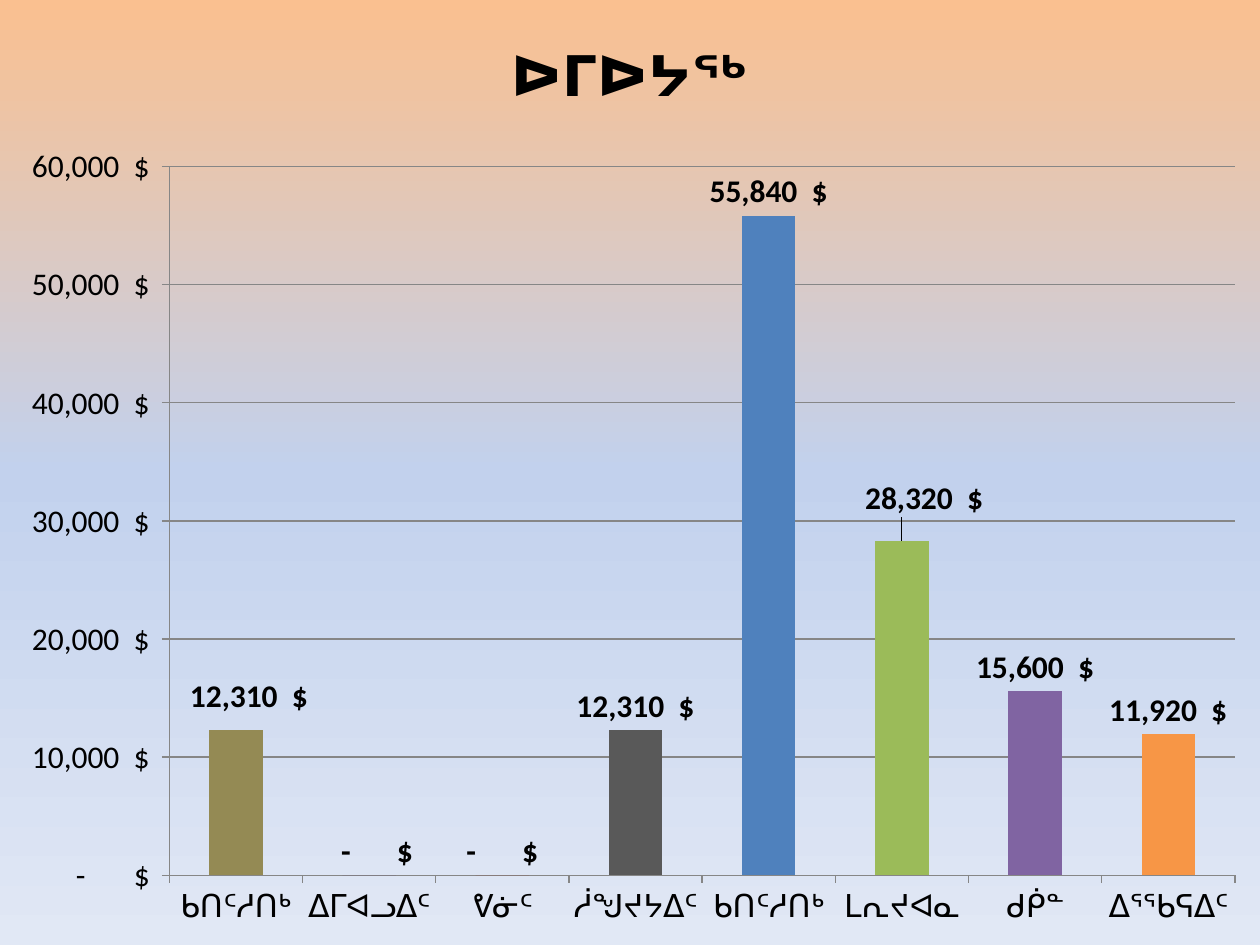
import pptx
import pptx.chart.data
import pptx.dml.color
import pptx.enum.chart
import pptx.oxml
import pptx.oxml.ns
import pptx.util
from dataclasses import dataclass

PX = 9525
WIDTH, HEIGHT = 960, 720
MONEY = '_ * #,##0_)\\ "$"_ ;_ * \\(#,##0\\)\\ "$"_ ;_ * "-"??_)\\ "$"_ ;_ @_ '


@dataclass(frozen=True)
class Theme:
    """Colours, font and type sizes of the slide."""
    font: str = "Calibri"
    text: str = "000000"
    rule: str = "868686"
    backdrop: tuple = ((0, "FAC090"), (50, "C2D1ED"), (100, "E1E8F5"))
    body_pt: int = 18
    title_pt: int = 32


THEME = Theme()
TITLE = "ᐅᒥᐅᔭᖅ"
COSTS = (
    ("ᑲᑎᑦᓱᑎᒃ", 12310, "948A54"),
    ("ᐃᒥᐊᓗᐃᑦ", 0, "604A7B"),
    ("ᕓᓃᑦ", 0, "953735"),
    ("ᓲᖑᔪᔭᐃᑦ", 12310, "595959"),
    ("ᑲᑎᑦᓱᑎᒃ", 55840, "4F81BD"),
    ("ᒪᕆᔪᐊᓇ", 28320, "9BBB59"),
    ("ᑯᑮᓐ", 15600, "8064A2"),
    ("ᐃᕐᖃᕋᐃᑦ", 11920, "F79646"),
)
LABEL_SHIFTS = {0: (10, -7), 1: (6, 0), 5: (17, -14)}


def rgb(code):
    """Return a colour object for a hex code."""
    return pptx.dml.color.RGBColor.from_string(code)


def style_font(font, size, bold=False):
    """Apply the theme font at the given size."""
    font.name = THEME.font
    font.size = pptx.util.Pt(size)
    font.bold = bold
    font.color.rgb = rgb(THEME.text)


def paint_backdrop(slide):
    """Fill the slide with a vertical three-stop gradient."""
    fill = slide.background.fill
    fill.gradient()
    gradient = slide.background._cSld.find(".//" + pptx.oxml.ns.qn("a:gradFill"))
    stops = "".join(
        f'<a:gs pos="{place * 1000}"><a:srgbClr val="{code}"/></a:gs>'
        for place, code in THEME.backdrop
    )
    space = pptx.oxml.ns.nsdecls("a")
    for child in list(gradient):
        gradient.remove(child)
    gradient.append(pptx.oxml.parse_xml(f"<a:gsLst {space}>{stops}</a:gsLst>"))
    gradient.append(pptx.oxml.parse_xml(f'<a:lin {space} ang="5400000" scaled="0"/>'))


def manual_layout(box, x, y, width=None, height=None):
    """Return a chart layout element for px measures within a box."""
    parts = []
    if width is not None:
        parts = ['<c:layoutTarget val="inner"/>', '<c:xMode val="edge"/>', '<c:yMode val="edge"/>']
    measures = (("x", x, box[2]), ("y", y, box[3]), ("w", width, box[2]), ("h", height, box[3]))
    parts += [
        f'<c:{key} val="{value / whole:.4f}"/>'
        for key, value, whole in measures if value is not None
    ]
    return pptx.oxml.parse_xml(
        f'<c:layout {pptx.oxml.ns.nsdecls("c")}><c:manualLayout>'
        f'{"".join(parts)}</c:manualLayout></c:layout>'
    )


def style_axes(chart):
    """Format the category axis, the money axis and its gridlines."""
    amounts, kinds = chart.value_axis, chart.category_axis
    amounts.minimum_scale, amounts.maximum_scale = 0, 60000
    amounts.major_unit = 10000
    amounts.has_major_gridlines = True
    amounts.tick_labels.number_format = MONEY
    amounts.tick_labels.number_format_is_linked = False
    for axis in (amounts, kinds):
        axis.major_tick_mark = pptx.enum.chart.XL_TICK_MARK.OUTSIDE
        style_font(axis.tick_labels.font, THEME.body_pt)
    for line in (amounts.format.line, kinds.format.line, amounts.major_gridlines.format.line):
        line.color.rgb = rgb(THEME.rule)
        line.width = pptx.util.Pt(0.75)


def style_bars(plot, box):
    """Colour each bar and place the amounts above the bars."""
    plot.gap_width = 150
    plot.vary_by_categories = False
    outside = pptx.enum.chart.XL_LABEL_POSITION.OUTSIDE_END
    costs = plot.series[0]
    labels = costs.data_labels
    labels.show_value = True
    labels.number_format = MONEY
    labels.number_format_is_linked = False
    labels.position = outside
    style_font(labels.font, THEME.body_pt, True)
    for index, (_, _, code) in enumerate(COSTS):
        fill = costs.points[index].format.fill
        fill.solid()
        fill.fore_color.rgb = rgb(code)
    number_format = labels._element.find(pptx.oxml.ns.qn("c:numFmt"))
    for index, shift in LABEL_SHIFTS.items():
        amount = costs.points[index].data_label
        style_font(amount.font, THEME.body_pt, True)
        amount.position = outside
        entry = amount._dLbl
        entry.insert(1, manual_layout(box, *shift))
        entry.insert(2, pptx.oxml.parse_xml(
            f'<c:numFmt {pptx.oxml.ns.nsdecls("c")} sourceLinked="0"/>'))
        entry[2].set("formatCode", number_format.get("formatCode"))


def add_cost_chart(slide, box):
    """Add the titled column chart of costs in the given box."""
    data = pptx.chart.data.CategoryChartData(number_format=MONEY)
    data.categories = [name for name, _, _ in COSTS]
    data.add_series("Series 1", [cost for _, cost, _ in COSTS])
    chart = slide.shapes.add_chart(
        pptx.enum.chart.XL_CHART_TYPE.COLUMN_CLUSTERED,
        *(pptx.util.Emu(side * PX) for side in box), data,
    ).chart
    style_font(chart.font, THEME.body_pt)
    chart.has_legend = False
    chart.has_title = True
    heading = chart.chart_title.text_frame
    heading.text = TITLE
    style_font(heading.paragraphs[0].runs[0].font, THEME.title_pt, True)
    style_axes(chart)
    style_bars(chart.plots[0], box)
    plot_area = chart._chartSpace.chart.plotArea
    for old in plot_area.findall(pptx.oxml.ns.qn("c:layout")):
        plot_area.remove(old)
    plot_area.insert(0, manual_layout(box, 129, 127, 812, 540))


def main():
    """Build and save the slide."""
    deck = pptx.Presentation()
    deck.slide_width = pptx.util.Emu(WIDTH * PX)
    deck.slide_height = pptx.util.Emu(HEIGHT * PX)
    slide = deck.slides.add_slide(deck.slide_layouts[6])
    paint_backdrop(slide)
    add_cost_chart(slide, (0, 0, WIDTH, HEIGHT))
    deck.save("out.pptx")


if __name__ == "__main__":
    main()
